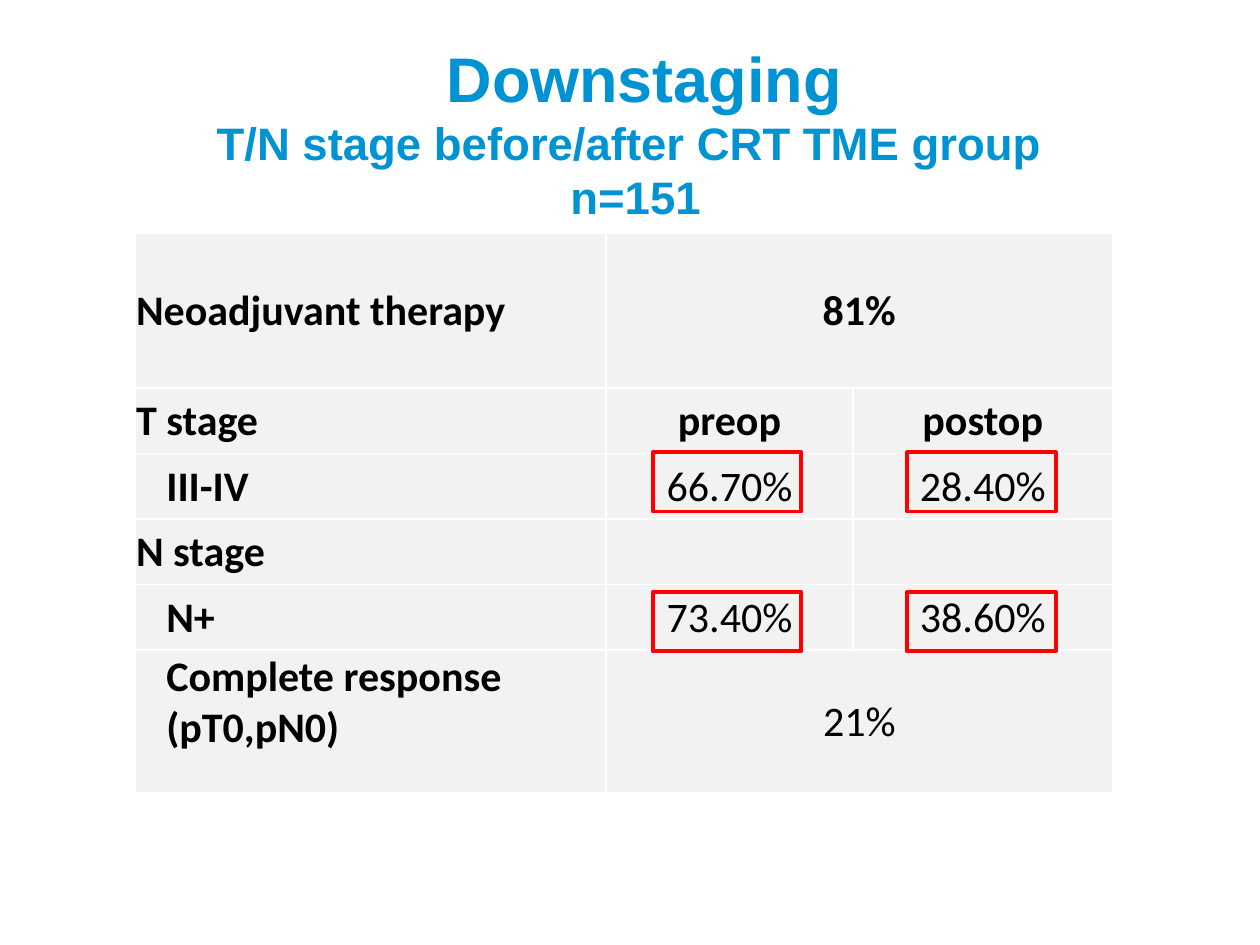
from pptx import Presentation
from pptx.dml.color import RGBColor
from pptx.enum.shapes import MSO_SHAPE
from pptx.enum.text import MSO_ANCHOR, MSO_AUTO_SIZE, PP_ALIGN
from pptx.util import Inches, Pt

BLUE = RGBColor(0x00, 0x93, 0xD3)
RED = RGBColor(0xFF, 0x00, 0x00)
BLACK = RGBColor(0x00, 0x00, 0x00)
LIGHT_GREY = RGBColor(0xF2, 0xF2, 0xF2)

INDENT = 0.25
PADDING = 0.01


class SlideBuilder:
    """Holds the style and the current slide."""
    title_font = "Arial"
    table_font = "Calibri"
    table_size = Pt(24)

    def __init__(self, slide):
        self.slide = slide

    def title(self, text, sizes, left, top, width, height):
        placeholder = self.slide.shapes.title
        placeholder.left, placeholder.top = Inches(left), Inches(top)
        placeholder.width, placeholder.height = Inches(width), Inches(height)
        frame = placeholder.text_frame
        frame.text = text
        frame.word_wrap = True
        frame.auto_size = MSO_AUTO_SIZE.NONE
        frame.vertical_anchor = MSO_ANCHOR.TOP
        frame.margin_top = Inches(0.1)
        heading = frame.paragraphs[0]
        heading.alignment = PP_ALIGN.CENTER
        for run, size in zip(heading.runs, sizes):
            font = run.font
            font.name, font.size, font.bold = self.title_font, Pt(size), True
            font.color.rgb = BLUE

    def table(self, left, top, columns, rows):
        table = self.slide.shapes.add_table(
            len(rows), len(columns), Inches(left), Inches(top),
            Inches(sum(columns)), Inches(sum(rows))).table
        table.first_row = table.horz_banding = False
        for column, width in zip(table.columns, columns):
            column.width = Inches(width)
        for row, height in zip(table.rows, rows):
            row.height = Inches(height)
        return table

    def cell(self, cell, text, bold, indent=PADDING, centered=False,
             anchor=MSO_ANCHOR.MIDDLE):
        cell.fill.solid()
        cell.fill.fore_color.rgb = LIGHT_GREY
        cell.vertical_anchor = anchor
        cell.margin_left = Inches(indent)
        cell.margin_top = cell.margin_right = Inches(PADDING)
        cell.margin_bottom = 0
        cell.text_frame.text = text
        for paragraph in cell.text_frame.paragraphs:
            paragraph.alignment = PP_ALIGN.CENTER if centered else PP_ALIGN.LEFT
            font = paragraph.font
            font.size = self.table_size
            for run in paragraph.runs:
                font = run.font
                font.name, font.size, font.bold = self.table_font, self.table_size, bold
                font.color.rgb = BLACK

    def highlight(self, left, top, width, height):
        box = self.slide.shapes.add_shape(
            MSO_SHAPE.RECTANGLE, Inches(left), Inches(top),
            Inches(width), Inches(height))
        box.shadow.inherit = False
        box.fill.background()
        box.line.color.rgb = RED
        box.line.width = Pt(2.25)


def main():
    prs = Presentation()
    prs.slide_width, prs.slide_height = Inches(10), Inches(7.5)
    builder = SlideBuilder(prs.slides.add_slide(prs.slide_layouts[5]))

    # Title with its two-line subtitle
    builder.title(" Downstaging\vT/N stage before/after CRT TME group \vn=151",
                  (36, 26, 26), 0.43, 0.21, 9.23, 0.42)

    # Staging table: label, indent, values, bold values
    staging = [
        ("Neoadjuvant therapy", PADDING, ["81%"], True),
        ("T stage", PADDING, ["preop", "postop"], True),
        ("III-IV", INDENT, ["66.70%", "28.40%"], False),
        ("N stage", PADDING, ["", ""], False),
        ("N+", INDENT, ["73.40%", "38.60%"], False),
        ("Complete response\n(pT0,pN0)", INDENT, ["21%"], False),
    ]
    table = builder.table(1.07, 1.85, [3.74, 1.96, 2.06],
                          [1.23] + [0.52] * 4 + [1.13])
    for row, (label, indent, values, bold) in enumerate(staging):
        last = row == len(staging) - 1
        builder.cell(table.cell(row, 0), label, True, indent,
                     anchor=MSO_ANCHOR.TOP if last else MSO_ANCHOR.MIDDLE)
        if len(values) == 1:
            table.cell(row, 1).merge(table.cell(row, 2))
        for column, value in enumerate(values, start=1):
            builder.cell(table.cell(row, column), value, bold, centered=True)

    # Red frames around the stage shares before and after therapy
    for top in (3.59, 4.7):
        for left in (5.18, 7.2):
            builder.highlight(left, top, 1.18, 0.47)

    prs.save("out.pptx")


if __name__ == "__main__":
    main()
